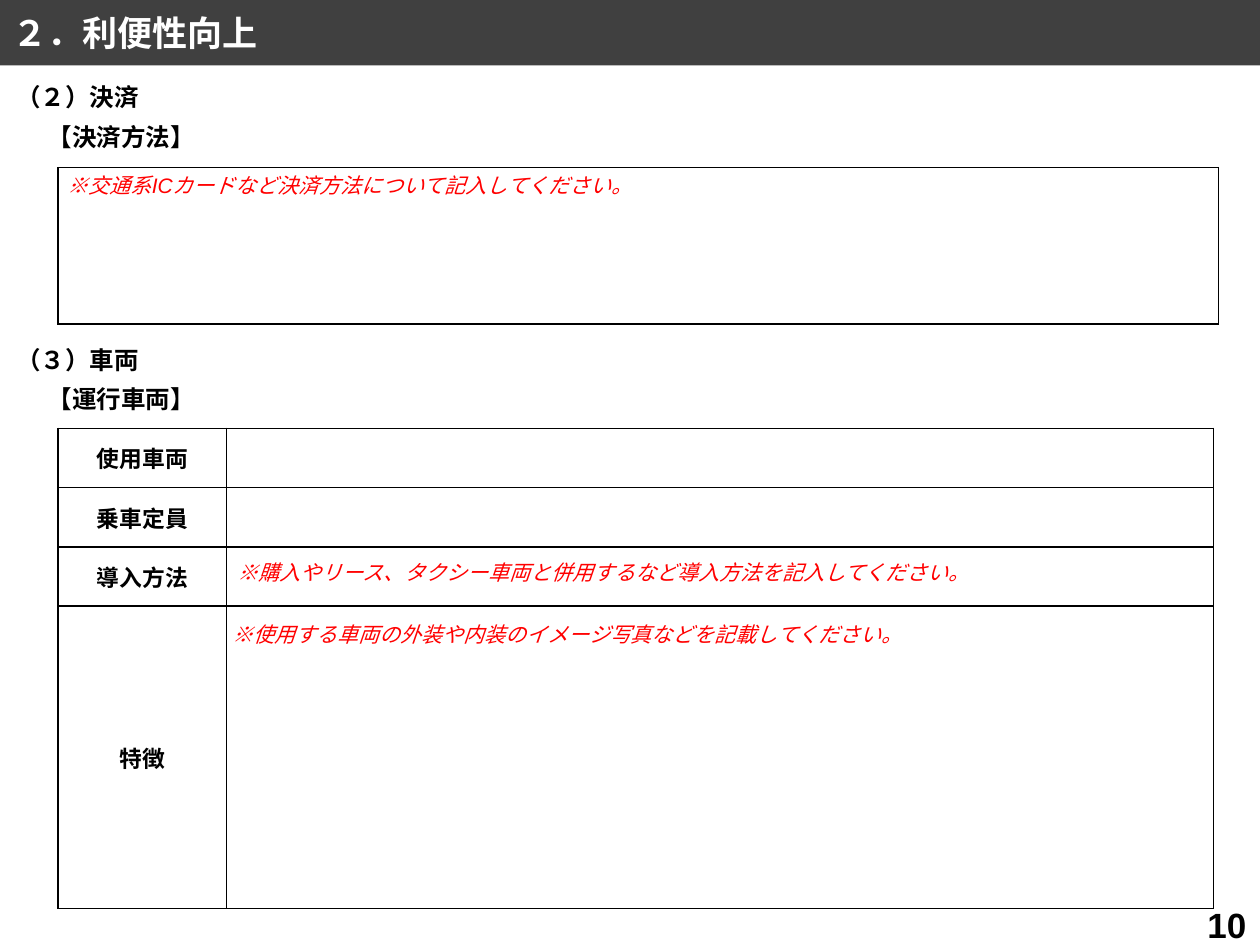
from dataclasses import dataclass

from lxml import etree
from pptx import Presentation
from pptx.dml.color import RGBColor
from pptx.enum import shapes, text
from pptx.oxml import ns
from pptx.util import Inches, Pt


@dataclass(frozen=True)
class Theme:
    bar: str = "404040"
    paper: str = "FFFFFF"
    ink: str = "000000"
    hint: str = "FF0000"
    latin: str = "Arial"
    japanese: str = "Noto Sans CJK JP"
    title_size: int = 20
    heading_size: int = 14
    label_size: int = 13
    hint_size: int = 12
    border: float = 1


THEME = Theme()


def write(frame, words, size, color=THEME.ink, font=THEME.latin,
          bold=False, italic=False, align=text.PP_ALIGN.LEFT):
    para = frame.paragraphs[0]
    para.alignment = align
    span = para.add_run()
    span.text = words
    span.font.size = Pt(size)
    span.font.bold = bold
    span.font.italic = italic
    span.font.color.rgb = RGBColor.from_string(color)
    span.font.name = font
    east_asian = etree.SubElement(span.font._element, ns.qn("a:ea"))
    east_asian.set("typeface", THEME.japanese)


def draw_borders(cell):
    properties = cell._tc.get_or_add_tcPr()
    for side in ("lnL", "lnR", "lnT", "lnB"):
        line = etree.SubElement(properties, ns.qn(f"a:{side}"), w=str(Pt(THEME.border)))
        fill = etree.SubElement(line, ns.qn("a:solidFill"))
        etree.SubElement(fill, ns.qn("a:srgbClr"), val=THEME.ink)


class FormPage:
    def __init__(self, deck, theme):
        self.theme = theme
        self.page = deck.slides.add_slide(deck.slide_layouts[6])

    def title_bar(self, words):
        bar = self.page.shapes.add_shape(
            shapes.MSO_SHAPE.RECTANGLE, 0, 0, Inches(10), Inches(0.52))
        bar.shadow.inherit = False
        bar.fill.solid()
        bar.fill.fore_color.rgb = RGBColor.from_string(self.theme.bar)
        bar.line.fill.background()
        bar.text_frame.vertical_anchor = text.MSO_ANCHOR.MIDDLE
        write(bar.text_frame, words, self.theme.title_size, self.theme.paper,
              self.theme.japanese, bold=True)

    def text_box(self, words, left, top, width, height, size, **style):
        box = self.page.shapes.add_textbox(
            Inches(left), Inches(top), Inches(width), Inches(height))
        box.text_frame.word_wrap = True
        write(box.text_frame, words, size, **style)

    def heading(self, words, left, top):
        self.text_box(words, left, top, 5.65, 0.34, self.theme.heading_size, bold=True)

    def hint(self, words, left, top):
        self.text_box(words, left, top, 8.03, 0.3, self.theme.hint_size,
                      color=self.theme.hint, italic=True)

    def table(self, left, top, widths, heights, labels=()):
        """Add a bordered form whose first column holds the labels."""
        grid = self.page.shapes.add_table(
            len(heights), len(widths), Inches(left), Inches(top),
            Inches(sum(widths)), Inches(sum(heights))).table
        for column, width in zip(grid.columns, widths):
            column.width = Inches(width)
        for row, height in zip(grid.rows, heights):
            row.height = Inches(height)
        for cell in grid.iter_cells():
            cell.margin_left = cell.margin_right = Inches(0.06)
            cell.margin_top = cell.margin_bottom = 0
            cell.vertical_anchor = text.MSO_ANCHOR.MIDDLE
            draw_borders(cell)
            cell.fill.solid()
            cell.fill.fore_color.rgb = RGBColor.from_string(self.theme.paper)
        for index, label in enumerate(labels):
            write(grid.cell(index, 0).text_frame, label, self.theme.label_size,
                  font=self.theme.japanese, bold=True, align=text.PP_ALIGN.CENTER)

    def page_number(self, number):
        self.text_box(str(number), 7.55, 7.12, 2.44, 0.38, self.theme.title_size,
                      bold=True, align=text.PP_ALIGN.RIGHT)


def main():
    deck = Presentation()
    deck.slide_width, deck.slide_height = Inches(10), Inches(7.5)
    form = FormPage(deck, THEME)
    form.title_bar("２．利便性向上")

    form.heading("（２）決済", 0.03, 0.6)
    form.heading("【決済方法】", 0.28, 0.92)
    form.table(0.46, 1.33, [9.21], [1.24])
    form.hint("※交通系ICカードなど決済方法について記入してください。", 0.44, 1.32)

    form.heading("（３）車両", 0.03, 2.69)
    form.heading("【運行車両】", 0.28, 3)
    form.table(0.46, 3.4, [1.34, 7.83], [0.47] * 3 + [2.4],
               ["使用車両", "乗車定員", "導入方法", "特徴"])
    form.hint("※購入やリース、タクシー車両と併用するなど導入方法を記入してください。", 1.79, 4.39)
    form.hint("※使用する車両の外装や内装のイメージ写真などを記載してください。", 1.75, 4.88)

    form.page_number(10)
    deck.save("out.pptx")


if __name__ == "__main__":
    main()
